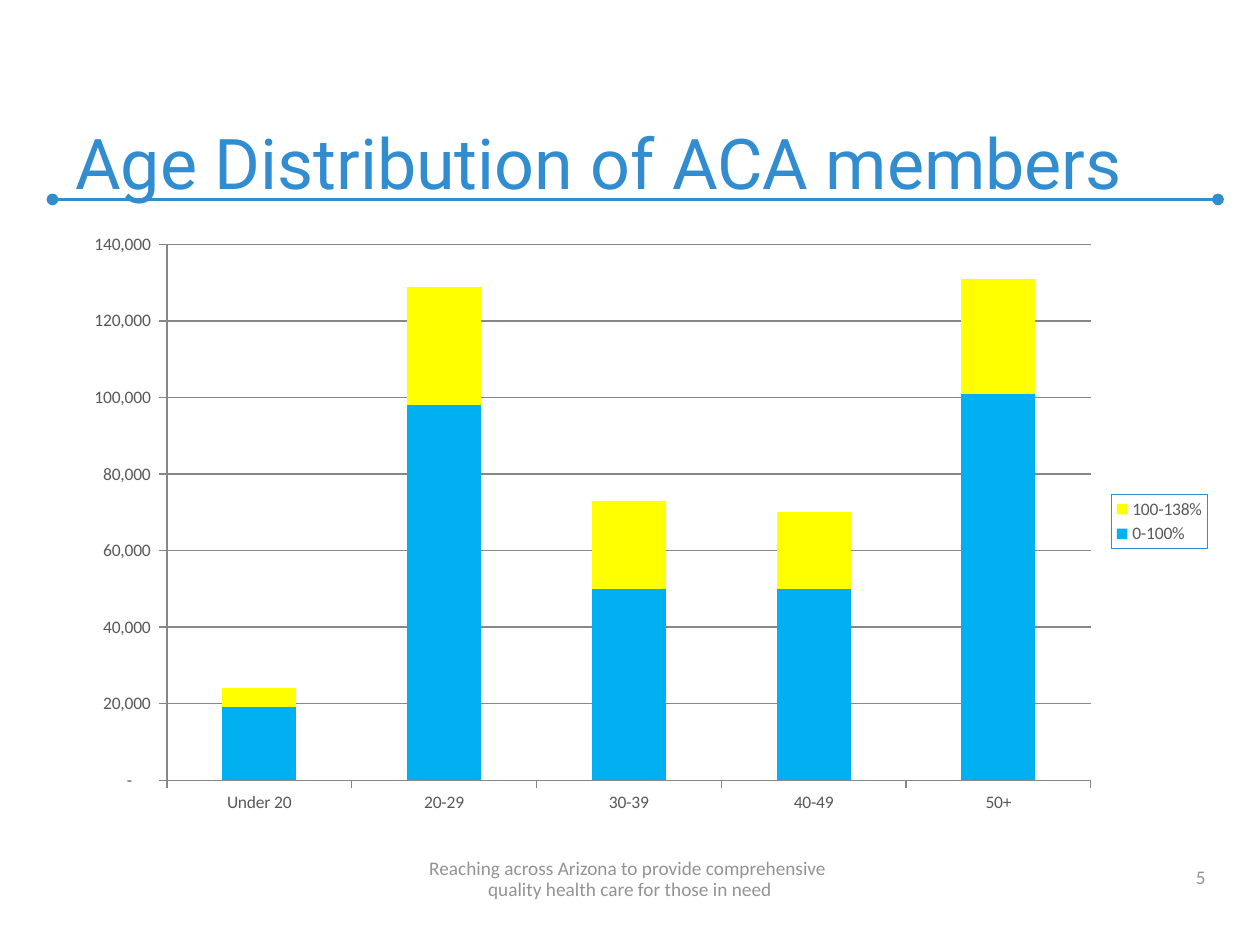
"""Build a slide with a stacked column chart of member ages."""
from dataclasses import dataclass

from lxml import etree
from pptx import Presentation
from pptx import util as u
from pptx.chart.data import CategoryChartData
from pptx.dml.color import RGBColor
from pptx.enum import chart as charts
from pptx.enum import shapes, text
from pptx.oxml import parse_xml
from pptx.oxml.ns import nsdecls, qn

COLOURS = {
    "title": "318DCF", "rule": "318DCC", "footer": "939393",
    "label": "595959", "axis": "878787", "blue": "00B0F0", "yellow": "FFFF00",
}
AGES = ["Under 20", "20-29", "30-39", "40-49", "50+"]
NUMBER_FORMAT = r'_(* #,##0_);_(* \(#,##0\);_(* "-"??_);_(@_)'
PLOT_AREA = {"x": 0.09, "y": 0.04, "w": 0.8, "h": 0.89}


@dataclass
class Label:
    words: str
    left: float
    top: float
    width: float
    height: float
    size: float
    face: str
    colour: str
    align: text.PP_ALIGN
    leading: float | None = None


@dataclass
class Band:
    name: str
    members: list[int]
    colour: str


LABELS = [
    Label("Age Distribution of ACA members", 36, 24, 654, 96, 40, "Roboto",
          "title", text.PP_ALIGN.LEFT),
    Label("5", 528, 488, 168, 23, 11, "Calibri", "footer", text.PP_ALIGN.RIGHT),
    Label("Reaching across Arizona to provide comprehensive \v"
          "quality health care for those in need", 0, 488, 720, 30, 11,
          "Calibri", "footer", text.PP_ALIGN.CENTER, 12),
]
BANDS = [
    Band("0-100%", [19000, 98000, 50000, 50000, 101000], "blue"),
    Band("100-138%", [5000, 31000, 23000, 20000, 30000], "yellow"),
]


def rgb(name: str) -> RGBColor:
    return RGBColor.from_string(COLOURS[name])


def style(target, **values) -> None:
    for name, value in values.items():
        setattr(target, name, value)


def style_line(line, colour: str, width: float) -> None:
    line.color.rgb = rgb(colour)
    line.width = u.Pt(width)


def add_label(page, label: Label) -> None:
    box = page.shapes.add_textbox(u.Pt(label.left), u.Pt(label.top),
                                  u.Pt(label.width), u.Pt(label.height))
    style(box.text_frame, word_wrap=True, vertical_anchor=text.MSO_ANCHOR.BOTTOM)
    para = box.text_frame.paragraphs[0]
    para.text = label.words
    para.alignment = label.align
    if label.leading:
        para.line_spacing = u.Pt(label.leading)
    for span in para.runs:
        style(span.font, name=label.face, size=u.Pt(label.size))
        span.font.color.rgb = rgb(label.colour)


def add_rule(page, left: float, right: float, top: float) -> None:
    rule = page.shapes.add_connector(shapes.MSO_CONNECTOR.STRAIGHT, u.Pt(left),
                                     u.Pt(top), u.Pt(right), u.Pt(top))
    style_line(rule.line, "rule", 2.25)
    outline = rule.line._get_or_add_ln()
    for end in ("a:headEnd", "a:tailEnd"):
        etree.SubElement(outline, qn(end), type="oval")
    etree.SubElement(rule._element.spPr, qn("a:effectLst"))


def place_plot(chart) -> None:
    plot_area = chart._chartSpace.chart.plotArea
    for old in plot_area.findall(qn("c:layout")):
        plot_area.remove(old)
    layout = parse_xml(f"<c:layout {nsdecls('c')}/>")
    manual = etree.SubElement(layout, qn("c:manualLayout"))
    settings = {"layoutTarget": "inner", "xMode": "edge", "yMode": "edge", **PLOT_AREA}
    for name, value in settings.items():
        etree.SubElement(manual, qn(f"c:{name}"), val=str(value))
    plot_area.insert(0, layout)


def frame_legend(legend) -> None:
    frame = parse_xml(
        f"<c:spPr {nsdecls('c', 'a')}><a:ln w=\"9525\"><a:solidFill>"
        f"<a:srgbClr val=\"{COLOURS['rule']}\"/></a:solidFill></a:ln></c:spPr>")
    legend._element.find(qn("c:overlay")).addnext(frame)


def add_age_chart(page) -> None:
    data = CategoryChartData(number_format="#,##0")
    data.categories = AGES
    for band in BANDS:
        data.add_series(band.name, band.members)
    chart = page.shapes.add_chart(
        charts.XL_CHART_TYPE.COLUMN_STACKED, u.Pt(36), u.Pt(126),
        u.Pt(660), u.Pt(344), data).chart
    style(chart, has_title=False, has_legend=True)
    style(chart.font, name="Calibri", size=u.Pt(10))
    chart.font.color.rgb = rgb("label")
    plot = chart.plots[0]
    style(plot, gap_width=150, overlap=100, vary_by_categories=False)
    for series, band in zip(plot.series, BANDS):
        series.invert_if_negative = False
        series.format.fill.solid()
        series.format.fill.fore_color.rgb = rgb(band.colour)
    for axis in (chart.category_axis, chart.value_axis):
        style(axis, major_tick_mark=charts.XL_TICK_MARK.OUTSIDE,
              minor_tick_mark=charts.XL_TICK_MARK.NONE)
        style_line(axis.format.line, "axis", 0.75)
    value_axis = chart.value_axis
    style(value_axis, minimum_scale=0, maximum_scale=140000, major_unit=20000,
          has_major_gridlines=True)
    style(value_axis.tick_labels, number_format=NUMBER_FORMAT,
          number_format_is_linked=False)
    style_line(value_axis.major_gridlines.format.line, "axis", 0.75)
    style(chart.legend, position=charts.XL_LEGEND_POSITION.RIGHT,
          include_in_layout=False)
    frame_legend(chart.legend)
    place_plot(chart)


def main() -> None:
    deck = Presentation()
    style(deck, slide_width=u.Pt(720), slide_height=u.Pt(540))
    page = deck.slides.add_slide(deck.slide_layouts[6])
    add_rule(page, 30, 696, 114)
    for label in LABELS:
        add_label(page, label)
    add_age_chart(page)
    deck.save("out.pptx")


if __name__ == "__main__":
    main()
